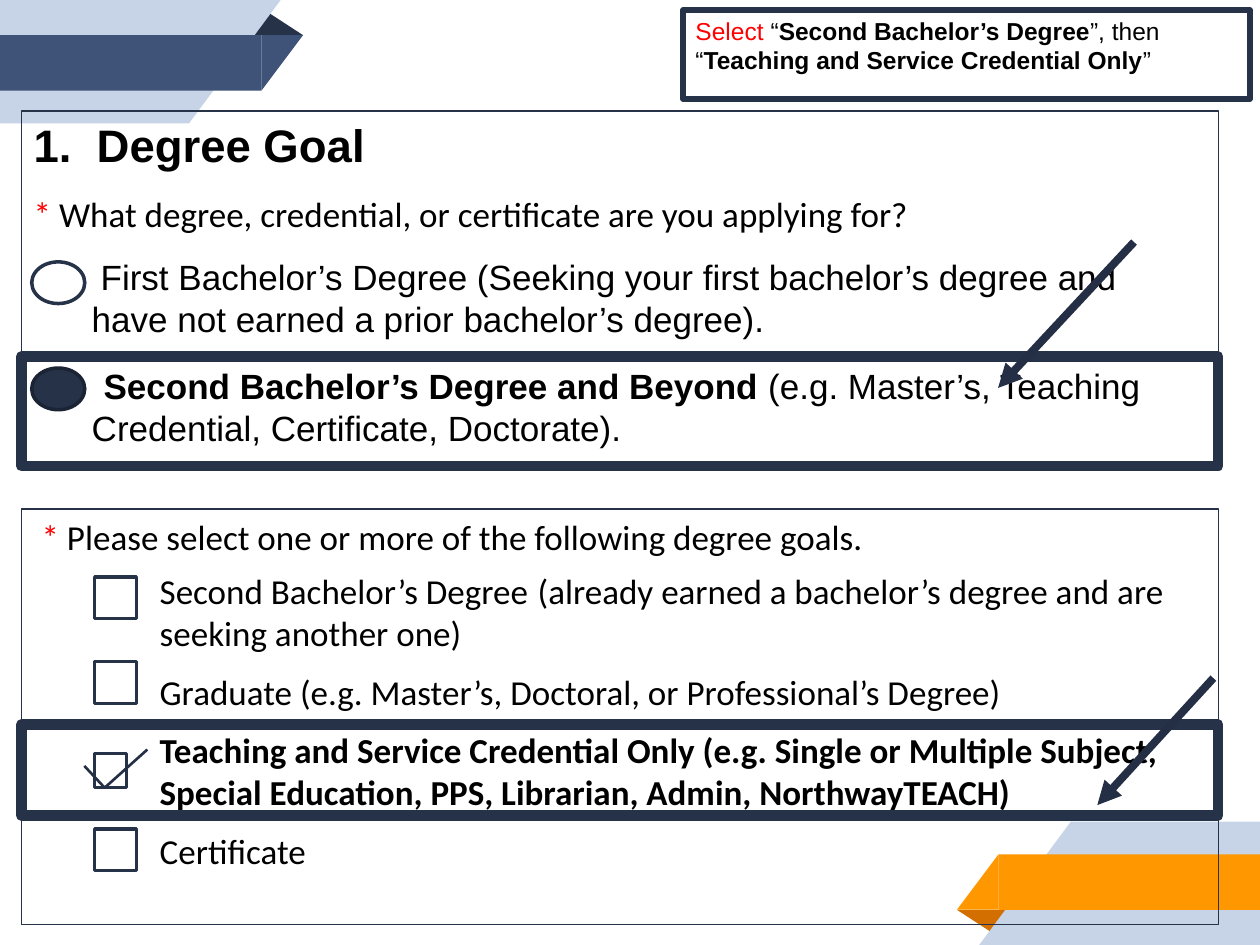
from lxml.etree import SubElement
from pptx import Presentation
from pptx.dml.color import RGBColor
from pptx.enum.shapes import MSO_CONNECTOR, MSO_SHAPE
from pptx.enum.text import MSO_ANCHOR, PP_ALIGN
from pptx.oxml.ns import qn
from pptx.util import Cm, Pt

NAVY = RGBColor(0x26, 0x32, 0x48)
INK = RGBColor(0x24, 0x2F, 0x46)
EDGE = RGBColor(0x1B, 0x24, 0x34)
SLATE = RGBColor(0x3F, 0x53, 0x78)
PALE = RGBColor(0xC7, 0xD3, 0xE6)
ORANGE = RGBColor(0xFF, 0x98, 0x00)
RUST = RGBColor(0xD2, 0x6F, 0x00)
RED = RGBColor(0xFF, 0x00, 0x00)
BLACK = RGBColor(0x00, 0x00, 0x00)
WHITE = RGBColor(0xFF, 0xFF, 0xFF)
WIDE, HIGH = 25.4, 19.05

ARIAL = {"name": "Arial", "size": Pt(20), "bold": False}
CALIBRI = {"name": "Calibri", "size": Pt(20), "bold": False}
NOTE = {"name": "Arial", "size": Pt(14), "bold": False}
STAR = {"color": RED}
BOLD = {"bold": True}


def add_form(slide, kind, box, fill=None, line=None, width=1):
    form = slide.shapes.add_shape(kind, *map(Cm, box))
    form.shadow.inherit = False
    if fill is None:
        form.fill.background()
    else:
        form.fill.solid()
        form.fill.fore_color.rgb = fill
    if line is None:
        form.line.fill.background()
    else:
        form.line.color.rgb = line
        form.line.width = Pt(width)
        SubElement(form.line._get_or_add_ln(), qn("a:round"))
    return form


def add_line(slide, box, start, end, width, arrow=False):
    """Draw a line between two points measured from the corner of box."""
    x, y = box[:2]
    ends = (x + start[0], y + start[1], x + end[0], y + end[1])
    line = slide.shapes.add_connector(MSO_CONNECTOR.STRAIGHT, *map(Cm, ends))
    line.line.color.rgb = INK
    line.line.width = Pt(width)
    if arrow:
        SubElement(line.line._get_or_add_ln(), qn("a:tailEnd"), type="triangle")
    SubElement(line._element.spPr, qn("a:effectLst"))


def add_text(form, base, rows):
    """Fill form with rows of (indent in cm, space before in pt, runs)."""
    frame = form.text_frame
    frame.word_wrap = True
    frame.vertical_anchor = MSO_ANCHOR.TOP
    for i, (left, gap, runs) in enumerate(rows):
        para = frame.paragraphs[0] if i == 0 else frame.add_paragraph()
        para.alignment = PP_ALIGN.LEFT
        para.space_before = Pt(gap)
        props = para._p.get_or_add_pPr()
        props.set("marL", str(Cm(left)))
        props.set("indent", "0")
        for words, change in runs:
            run = para.add_run()
            run.text = words
            look = {"color": BLACK, **base, **change}
            run.font.color.rgb = look.pop("color")
            for key, value in look.items():
                setattr(run.font, key, value)


def add_ribbon(slide, band, fold, turned=False):
    """Place a folded ribbon top left, or turned half round at bottom right."""
    rect, wedge = MSO_SHAPE.RECTANGLE, MSO_SHAPE.RIGHT_TRIANGLE
    parts = [
        (MSO_SHAPE.ISOSCELES_TRIANGLE, (5.02, 0.23, 1.09, 0.48), fold),
        (rect, (0, 0, 3.81, 2.49), PALE),
        (wedge, (3.81, 0, 1.85, 2.49), PALE),
        (rect, (0, 0.71, 5.27, 1.12), band),
        (wedge, (5.27, 0.71, 0.84, 1.12), band),
    ]
    for kind, (x, y, w, h), fill in parts:
        if turned:
            x, y = WIDE - x - w, HIGH - y - h
        form = add_form(slide, kind, (x, y, w, h), fill)
        form.rotation = 180 if turned else 0
        if kind == wedge:
            form._element.spPr.xfrm.set("flipV", "1")
        elif fill == fold:
            form.adjustments[0] = 0.324


def add_degree(slide, box):
    x, y, w, h = box
    form = add_form(slide, MSO_SHAPE.RECTANGLE, box, line=NAVY, width=0.75)
    add_text(form, ARIAL, [
        (1.27, 0, [("Degree Goal", {"size": Pt(26), "bold": True})]),
        (0, 12, [("*", {**CALIBRI, **STAR}),
                 (" What degree, credential, or certificate are you applying for?", CALIBRI)]),
        (1.35, 12, [("First Bachelor’s Degree (Seeking your first bachelor’s degree and", {})]),
        (1.17, 0, [("have not earned a prior bachelor’s degree).", {})]),
        (1.41, 14, [("Second Bachelor’s Degree and Beyond ", BOLD),
                    ("(e.g. Master’s, Teaching", {})]),
        (1.17, 0, [("Credential, Certificate, Doctorate).", {})]),
    ])
    props = form.text_frame.paragraphs[0]._p.get_or_add_pPr()
    props.set("indent", str(-Cm(1.27)))
    tint = SubElement(props, qn("a:buClr"))
    SubElement(tint, qn("a:srgbClr"), val=str(BLACK))
    SubElement(props, qn("a:buFont"), typeface="Arial")
    SubElement(props, qn("a:buAutoNum"), type="arabicPeriod")
    for top, fill, line in ((5.18, NAVY, EDGE), (3.04, WHITE, NAVY)):
        add_form(slide, MSO_SHAPE.OVAL, (x + 0.21, y + top, 1.07, 0.84), fill, line, 2)
    add_form(slide, MSO_SHAPE.RECTANGLE, (x, y + 4.95, w, 2.21), line=NAVY, width=6)
    add_line(slide, box, (22.43, 2.64), (19.69, 5.58), 4.5, arrow=True)


def add_goals(slide, box):
    x, y, w, h = box
    form = add_form(slide, MSO_SHAPE.RECTANGLE, box, line=NAVY, width=0.75)
    add_text(form, CALIBRI, [
        (0.16, 0, [("*", STAR),
                   (" Please select one or more of the following degree goals.", {})]),
        (2.54, 7, [("Second Bachelor’s Degree\t(already earned a bachelor’s degree and are", {})]),
        (2.54, 0, [("seeking another one)", {})]),
        (2.54, 9.5, [("Graduate (e.g. Master’s, Doctoral, or Professional’s Degree)", {})]),
        (2.54, 9.5, [("Teaching and Service Credential Only "
                      "(e.g. Single or Multiple Subject,", BOLD)]),
        (2.54, 0, [("Special Education, PPS, Librarian, Admin, NorthwayTEACH)", BOLD)]),
        (2.54, 9.5, [("Certificate", {})]),
    ])
    for top, wide, tall in ((1.37, 0.84, 0.84), (3.08, 0.84, 0.84),
                            (4.93, 0.64, 0.69), (6.45, 0.84, 0.84)):
        add_form(slide, MSO_SHAPE.RECTANGLE, (x + 1.48, y + top, wide, tall), line=NAVY, width=2)
    add_line(slide, box, (1.27, 5.18), (1.68, 5.62), 1.5)
    add_line(slide, box, (1.68, 5.62), (2.54, 4.85), 1.5)
    add_form(slide, MSO_SHAPE.RECTANGLE, (x, y + 4.35, w, 1.83), line=NAVY, width=6)
    add_line(slide, box, (24.03, 3.41), (21.69, 5.97), 4.5, arrow=True)


def add_note(slide, box):
    form = add_form(slide, MSO_SHAPE.RECTANGLE, box, line=NAVY, width=3)
    add_text(form, NOTE, [(0, 0, [
        ("Select", STAR), (" “", {}), ("Second Bachelor’s Degree", BOLD), ("”, then “", {}),
        ("Teaching and Service Credential Only", BOLD), ("”", {}),
    ])])


def main():
    deck = Presentation()
    deck.slide_width, deck.slide_height = Cm(WIDE), Cm(HIGH)
    slide = deck.slides.add_slide(deck.slide_layouts[6])
    add_ribbon(slide, SLATE, NAVY)
    add_ribbon(slide, ORANGE, RUST, turned=True)
    add_degree(slide, (0.43, 2.24, 24.13, 7.19))
    add_goals(slide, (0.43, 10.26, 24.13, 8.38))
    add_note(slide, (13.77, 0.2, 11.43, 1.8))
    deck.save("out.pptx")


if __name__ == "__main__":
    main()
